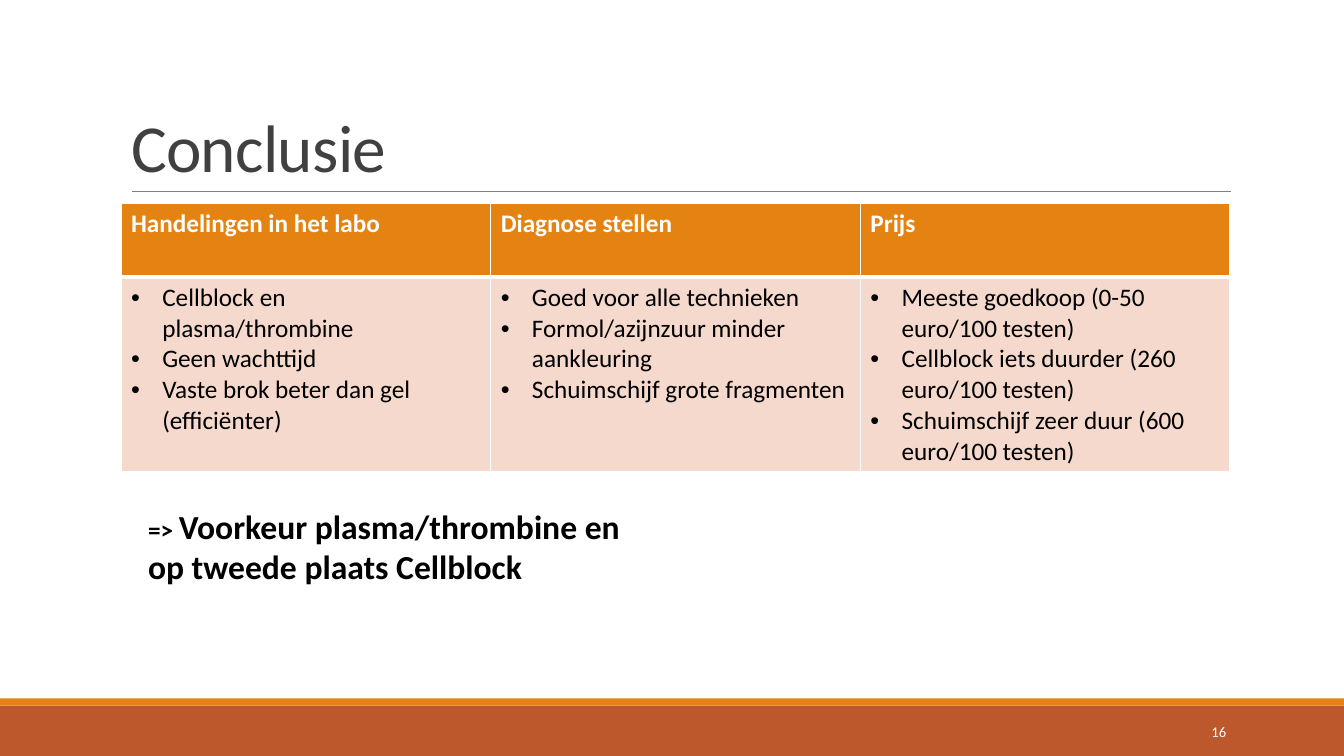
from lxml import etree
from pptx import Presentation
from pptx.dml.color import RGBColor
from pptx.enum.shapes import MSO_CONNECTOR, MSO_SHAPE
from pptx.enum.text import MSO_ANCHOR, PP_ALIGN
from pptx.oxml.ns import qn
from pptx.util import Inches, Pt

LEFT, RIGHT = PP_ALIGN.LEFT, PP_ALIGN.RIGHT
TOP, MIDDLE, BOTTOM = MSO_ANCHOR.TOP, MSO_ANCHOR.MIDDLE, MSO_ANCHOR.BOTTOM
RECTANGLE = MSO_SHAPE.RECTANGLE
STRAIGHT = MSO_CONNECTOR.STRAIGHT

FONT = "Calibri"
COLORS = {
    "white": "FFFFFF",
    "black": "000000",
    "title": "404040",
    "rule": "808080",
    "orange": "E48312",
    "rust": "BD582C",
    "blush": "F5D9CC",
}
COLUMNS = {
    "Handelingen in het labo": [
        "Cellblock en plasma/thrombine",
        "Geen wachttijd",
        "Vaste brok beter dan gel (efficiënter)",
    ],
    "Diagnose stellen": [
        "Goed voor alle technieken",
        "Formol/azijnzuur minder aankleuring",
        "Schuimschijf grote fragmenten",
    ],
    "Prijs": [
        "Meeste goedkoop (0-50 euro/100 testen)",
        "Cellblock iets duurder (260 euro/100 testen)",
        "Schuimschijf zeer duur (600 euro/100 testen)",
    ],
}


def color(name):
    return RGBColor.from_string(COLORS[name])


def add_span(para, text, size=18, ink="black", bold=False):
    span = para.add_run()
    span.text = text
    span.font.name = FONT
    span.font.size = Pt(size)
    span.font.bold = bold
    span.font.color.rgb = color(ink)
    return span


def add_band(page, top, height, fill):
    band = page.shapes.add_shape(RECTANGLE, 0, Inches(top), Inches(13.33), Inches(height))
    band.shadow.inherit = False
    band.fill.solid()
    band.fill.fore_color.rgb = color(fill)
    band.line.fill.background()


def add_rule(page, left, right, top):
    rule = page.shapes.add_connector(STRAIGHT, Inches(left), Inches(top), Inches(right), Inches(top))
    rule.line.color.rgb = color("rule")
    rule.line.width = Pt(0.5)
    etree.SubElement(rule._element.spPr, qn("a:effectLst"))


def set_title(page, text):
    title = page.shapes.title
    title.left, title.top = Inches(1.2), Inches(0.31)
    title.width, title.height = Inches(11), Inches(1.59)
    title.text_frame.vertical_anchor = BOTTOM
    para = title.text_frame.paragraphs[0]
    para.alignment = LEFT
    para.line_spacing = 0.85
    span = add_span(para, text, size=48, ink="title")
    span.font._element.set("spc", "-50")


def add_text(page, left, top, width, height, spans, align=LEFT, anchor=TOP):
    """Add a text box; spans is a list of (text, format) pairs."""
    box = page.shapes.add_textbox(Inches(left), Inches(top), Inches(width), Inches(height))
    box.text_frame.word_wrap = True
    box.text_frame.vertical_anchor = anchor
    para = box.text_frame.paragraphs[0]
    para.alignment = align
    for text, style in spans:
        add_span(para, text, **style)


def set_bullet(para):
    props = para._p.get_or_add_pPr()
    props.set("marL", str(Inches(0.31)))
    props.set("indent", str(-Inches(0.31)))
    etree.SubElement(props, qn("a:buFont"), typeface="Arial")
    etree.SubElement(props, qn("a:buChar"), char="•")


def set_borders(cell, top=1, bottom=1):
    """Draw white cell borders; top and bottom are widths in points."""
    props = cell._tc.get_or_add_tcPr()
    widths = {"a:lnL": 1, "a:lnR": 1, "a:lnT": top, "a:lnB": bottom}
    for position, (tag, width) in enumerate(widths.items()):
        line = etree.Element(qn(tag), w=str(Pt(width)))
        fill = etree.SubElement(line, qn("a:solidFill"))
        etree.SubElement(fill, qn("a:srgbClr"), val=COLORS["white"])
        props.insert(position, line)


def fill_cell(cell, lines, fill, ink="black", bold=False, bullets=False):
    cell.fill.solid()
    cell.fill.fore_color.rgb = color(fill)
    frame = cell.text_frame
    for index, text in enumerate(lines):
        para = frame.add_paragraph() if index else frame.paragraphs[0]
        if bullets:
            set_bullet(para)
        add_span(para, text, ink=ink, bold=bold)


def add_comparison(page):
    table = page.shapes.add_table(
        2, len(COLUMNS), Inches(1.2), Inches(2.02), Inches(11), Inches(2.64)
    ).table
    table.horz_banding = False
    table.rows[0].height = Inches(0.73)
    table.rows[1].height = Inches(1.91)
    for index, (heading, points) in enumerate(COLUMNS.items()):
        header, body = table.cell(0, index), table.cell(1, index)
        fill_cell(header, [heading], "orange", ink="white", bold=True)
        fill_cell(body, points, "blush", bullets=True)
        set_borders(header, bottom=3)
        set_borders(body, top=3)


def main():
    deck = Presentation()
    deck.slide_width, deck.slide_height = Inches(13.33), Inches(7.5)
    page = deck.slides.add_slide(deck.slide_layouts[5])
    add_band(page, 7, 0.5, "rust")
    add_band(page, 6.93, 0.07, "orange")
    add_rule(page, 1.31, 12.21, 1.9)
    set_title(page, "Conclusie")
    add_comparison(page)
    add_text(page, 1.37, 4.97, 4.92, 0.91, [
        ("=> ", {"bold": True}),
        ("Voorkeur plasma/thrombine en op tweede plaats Cellblock", {"size": 24, "bold": True}),
    ])
    add_text(page, 10.83, 7.06, 1.43, 0.4, [("16", {"size": 10.5, "ink": "white"})],
             align=RIGHT, anchor=MIDDLE)
    deck.save("out.pptx")


if __name__ == "__main__":
    main()
